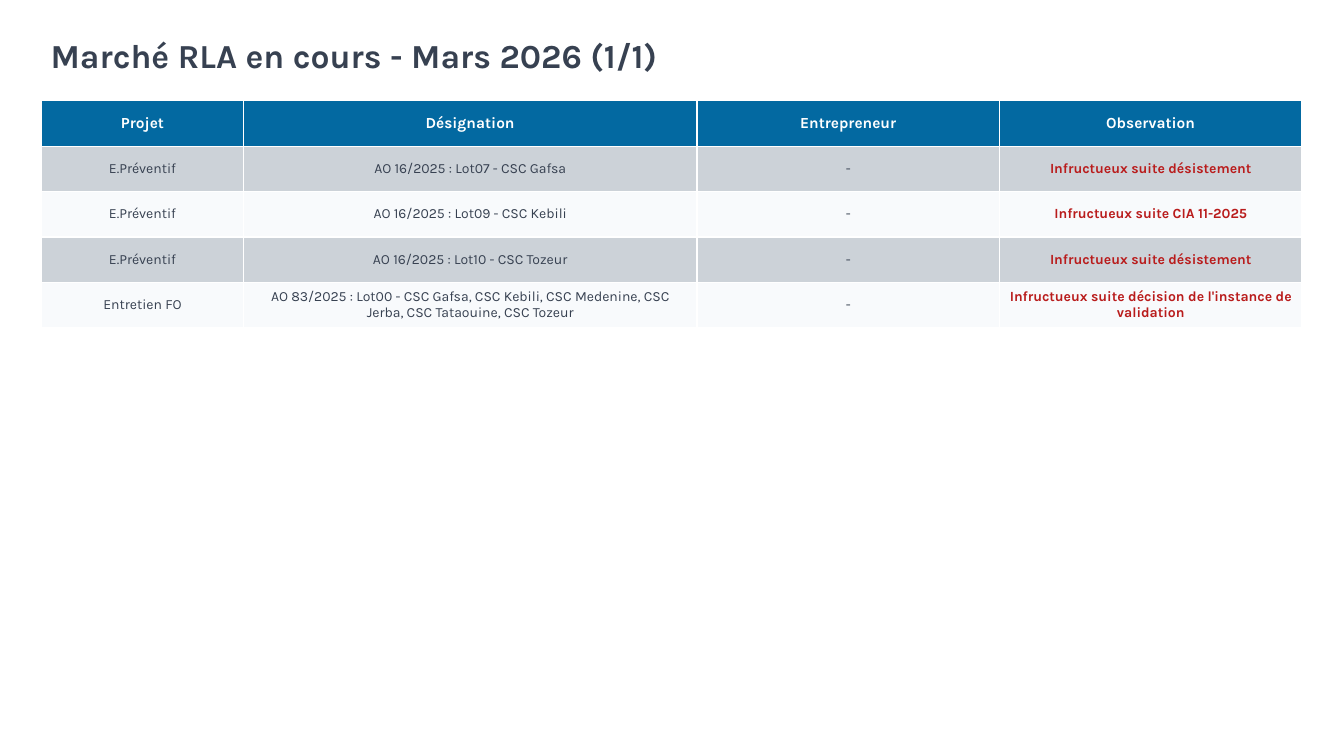
from dataclasses import dataclass

from pptx import Presentation
from pptx import util as u
from pptx.dml import color
from pptx.enum import text


@dataclass(frozen=True)
class Theme:
    """Hold the colours, font and type sizes."""
    font: str = "Karla"
    ink: str = "374151"
    head: str = "0369A1"
    light: str = "FFFFFF"
    alert: str = "B91C1C"
    bands: tuple = ("CCD2D8", "F8FAFC")
    title: int = 24
    label: int = 11
    body: int = 10


LOOK = Theme()
HEADS = ["Projet", "Désignation", "Entrepreneur", "Observation"]
LOTS = [
    ["E.Préventif", "AO 16/2025 : Lot07 - CSC Gafsa", "-",
     "Infructueux suite désistement"],
    ["E.Préventif", "AO 16/2025 : Lot09 - CSC Kebili", "-",
     "Infructueux suite CIA 11-2025"],
    ["E.Préventif", "AO 16/2025 : Lot10 - CSC Tozeur", "-",
     "Infructueux suite désistement"],
    ["Entretien FO",
     "AO 83/2025 : Lot00 - CSC Gafsa, CSC Kebili, CSC Medenine, CSC Jerba, "
     "CSC Tataouine, CSC Tozeur", "-",
     "Infructueux suite décision de l'instance de validation"],
]
SHARES = [2, 4.5, 3, 3]


def write(frame, words, size=LOOK.body, ink=LOOK.ink, bold=False,
          align=text.PP_ALIGN.CENTER):
    """Write one formatted paragraph into a text frame."""
    para = frame.paragraphs[0]
    para.alignment = align
    run = para.add_run()
    run.text = words
    run.font.name = LOOK.font
    run.font.size = u.Pt(size)
    run.font.bold = bold
    run.font.color.rgb = color.RGBColor.from_string(ink)


def add_title(slide, words, left, top, width, height):
    """Place the slide title in the given box."""
    title = slide.shapes.title
    title.left, title.top = u.Cm(left), u.Cm(top)
    title.width, title.height = u.Cm(width), u.Cm(height)
    frame = title.text_frame
    frame.word_wrap = True
    frame.auto_size = text.MSO_AUTO_SIZE.NONE
    frame.vertical_anchor = text.MSO_ANCHOR.TOP
    write(frame, words, size=LOOK.title, bold=True, align=text.PP_ALIGN.LEFT)


def fill_cell(cell, words, fill, **style):
    """Fill one table cell with colour and text."""
    cell.fill.solid()
    cell.fill.fore_color.rgb = color.RGBColor.from_string(fill)
    cell.vertical_anchor = text.MSO_ANCHOR.MIDDLE
    write(cell.text_frame, words, **style)


def add_lots(slide, left, top, width, height):
    """Place the table of lots in the given box."""
    grid = slide.shapes.add_table(
        len(LOTS) + 1, len(HEADS),
        u.Cm(left), u.Cm(top), u.Cm(width), u.Cm(height)).table
    for col, share in zip(grid.columns, SHARES):
        col.width = u.Cm(width * share / sum(SHARES))
    for c, head in enumerate(HEADS):
        fill_cell(grid.cell(0, c), head, LOOK.head,
                  size=LOOK.label, ink=LOOK.light, bold=True)
    for r, lot in enumerate(LOTS):
        for c, words in enumerate(lot):
            last = c == len(HEADS) - 1
            fill_cell(grid.cell(r + 1, c), words, LOOK.bands[r % 2],
                      ink=LOOK.alert if last else LOOK.ink, bold=last)


def main():
    """Build and save the slide."""
    deck = Presentation()
    deck.slide_width, deck.slide_height = u.Cm(33.86), u.Cm(19.05)
    slide = deck.slides.add_slide(deck.slide_layouts[5])
    add_title(slide, "Marché RLA en cours - Mars 2026 (1/1)",
              1.02, 0.76, 30.48, 1.52)
    add_lots(slide, 1.05, 2.54, 31.75, 5.72)
    deck.save("out.pptx")


if __name__ == "__main__":
    main()
